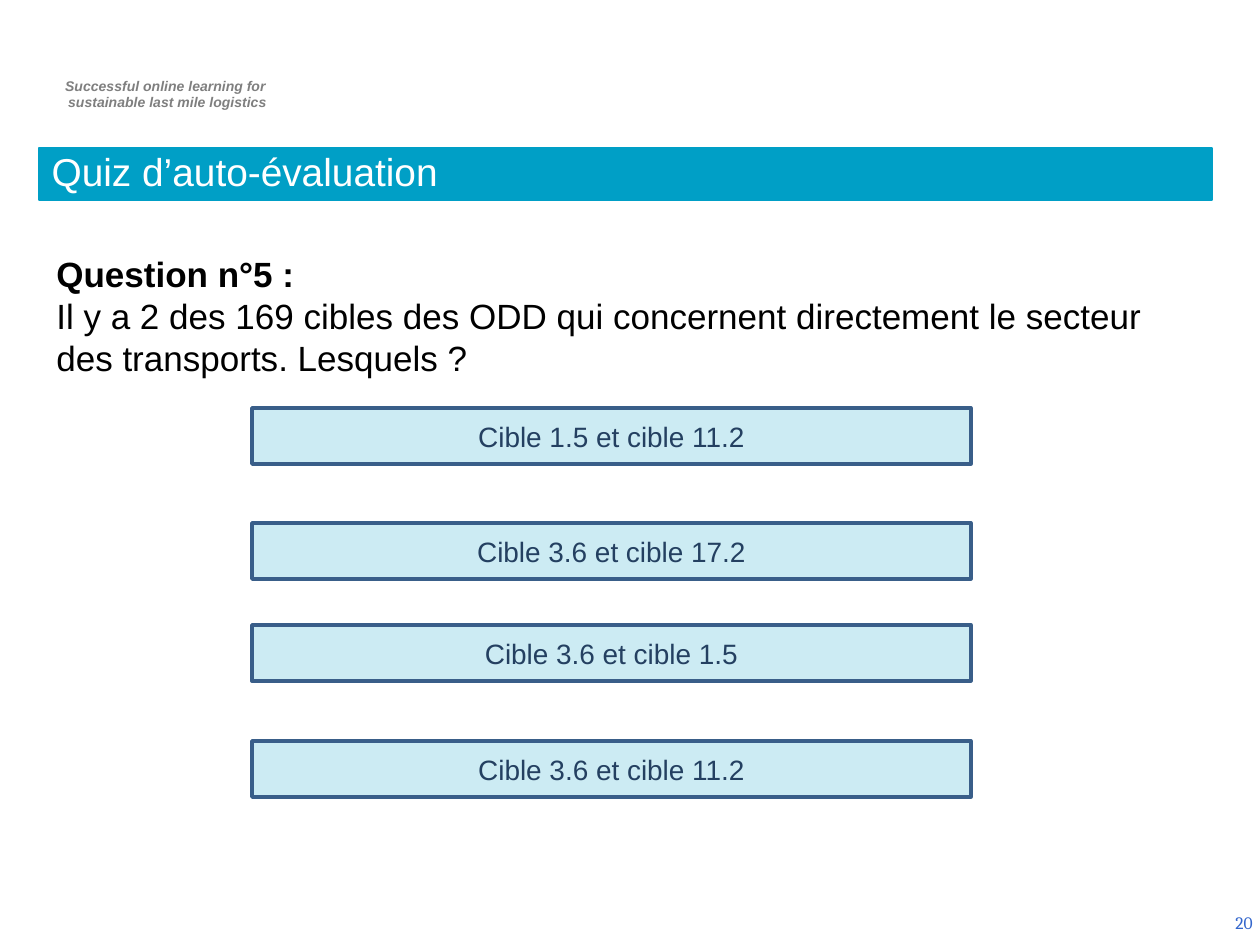
from lxml.etree import SubElement
from pptx import Presentation
from pptx.dml.color import RGBColor
from pptx.enum.shapes import MSO_SHAPE
from pptx.enum.text import MSO_ANCHOR, MSO_AUTO_SIZE, PP_ALIGN
from pptx.oxml.ns import qn
from pptx.util import Emu, Pt

# Content
TITLE = "Quiz d’auto-évaluation"
TAGLINE = ["Successful online learning for ", "sustainable last mile logistics"]
QUESTION = [
    ("Question n°5 :", True),
    ("Il y a 2 des 169 cibles des ODD qui concernent directement le secteur "
     "des transports. Lesquels ?", False),
]
ANSWERS = [  # text, top in px
    ("Cible 1.5 et cible 11.2", 408),
    ("Cible 3.6 et cible 17.2", 523),
    ("Cible 3.6 et cible 1.5", 625),
    ("Cible 3.6 et cible 11.2", 741),
]
PAGE_NUMBER = "20"

TEAL, BORDER, NAVY = "009FC6", "395E89", "244061"
ANSWER_LEFT, ANSWER_WIDTH, ANSWER_HEIGHT = 252, 719, 56
ANSWER_OPACITY = 20
TAGLINE_INDENT, TITLE_INDENT = 5, 102


def px(length):
    return Emu(round(length * 914400 / 126))


def color(value):
    return RGBColor.from_string(value)


def write(paragraph, text, size, ink, font="Arial", bold=False, italic=False,
          align=PP_ALIGN.LEFT):
    paragraph.alignment = align
    run = paragraph.add_run()
    run.text = text
    run.font.name, run.font.size = font, Pt(size)
    run.font.bold, run.font.italic = bold, italic
    run.font.color.rgb = color(ink)


def add_frame(slide, left, top, width, height, anchor=MSO_ANCHOR.TOP):
    frame = slide.shapes.add_textbox(*map(px, (left, top, width, height))).text_frame
    frame.word_wrap = True
    frame.vertical_anchor = anchor
    return frame


def next_paragraph(frame, index):
    return frame.add_paragraph() if index else frame.paragraphs[0]


def paint(shape, fill, line, line_width):
    shape.fill.solid()
    shape.fill.fore_color.rgb = color(fill)
    shape.line.color.rgb = color(line)
    shape.line.width = Pt(line_width)


def add_answer(slide, text, top):
    answer = slide.shapes.add_shape(
        MSO_SHAPE.RECTANGLE,
        *map(px, (ANSWER_LEFT, top, ANSWER_WIDTH, ANSWER_HEIGHT)))
    answer.shadow.inherit = False
    paint(answer, TEAL, BORDER, 2)
    fill_color = answer.fill._xPr.find(qn("a:solidFill"))[0]
    SubElement(fill_color, qn("a:alpha"), val=str(ANSWER_OPACITY * 1000))
    answer.text_frame.vertical_anchor = MSO_ANCHOR.MIDDLE
    write(answer.text_frame.paragraphs[0], text, 16, NAVY, align=PP_ALIGN.CENTER)


def main():
    deck = Presentation()
    deck.slide_width, deck.slide_height = px(1260), px(945)
    slide = deck.slides.add_slide(deck.slide_layouts[5])

    # Title bar
    title = slide.shapes.title
    title.left, title.top, title.width, title.height = map(px, (39, 148, 1173, 52))
    paint(title, TEAL, TEAL, 0.75)
    title.text_frame.auto_size = MSO_AUTO_SIZE.NONE
    title.text_frame.vertical_anchor = MSO_ANCHOR.BOTTOM
    heading = title.text_frame.paragraphs[0]
    heading.line_spacing = 0.8
    write(heading, TITLE, 22.2, "FFFFFF")
    properties = heading._p.get_or_add_pPr()
    properties.set("marL", str(px(TITLE_INDENT)))
    properties.set("indent", str(-px(TITLE_INDENT)))

    # Course tagline
    tagline = add_frame(slide, 37, 71, 256, 47)
    for index, text in enumerate(TAGLINE):
        paragraph = next_paragraph(tagline, index)
        write(paragraph, text, 8, "7F7F7F", bold=True, italic=True,
              align=PP_ALIGN.CENTER)
        paragraph._p.get_or_add_pPr().set("marL", str(px(TAGLINE_INDENT)))

    # Question
    question = add_frame(slide, 44, 246, 1173, 183)
    for index, (text, bold) in enumerate(QUESTION):
        write(next_paragraph(question, index), text, 20, "000000", bold=bold)

    # Answers
    for text, top in ANSWERS:
        add_answer(slide, text, top)

    # Page number
    page = add_frame(slide, 971, 898, 294, 50, MSO_ANCHOR.MIDDLE)
    write(page.paragraphs[0], PAGE_NUMBER, 10, "3366CC", font="Cambria",
          align=PP_ALIGN.RIGHT)

    deck.save("out.pptx")


if __name__ == "__main__":
    main()
